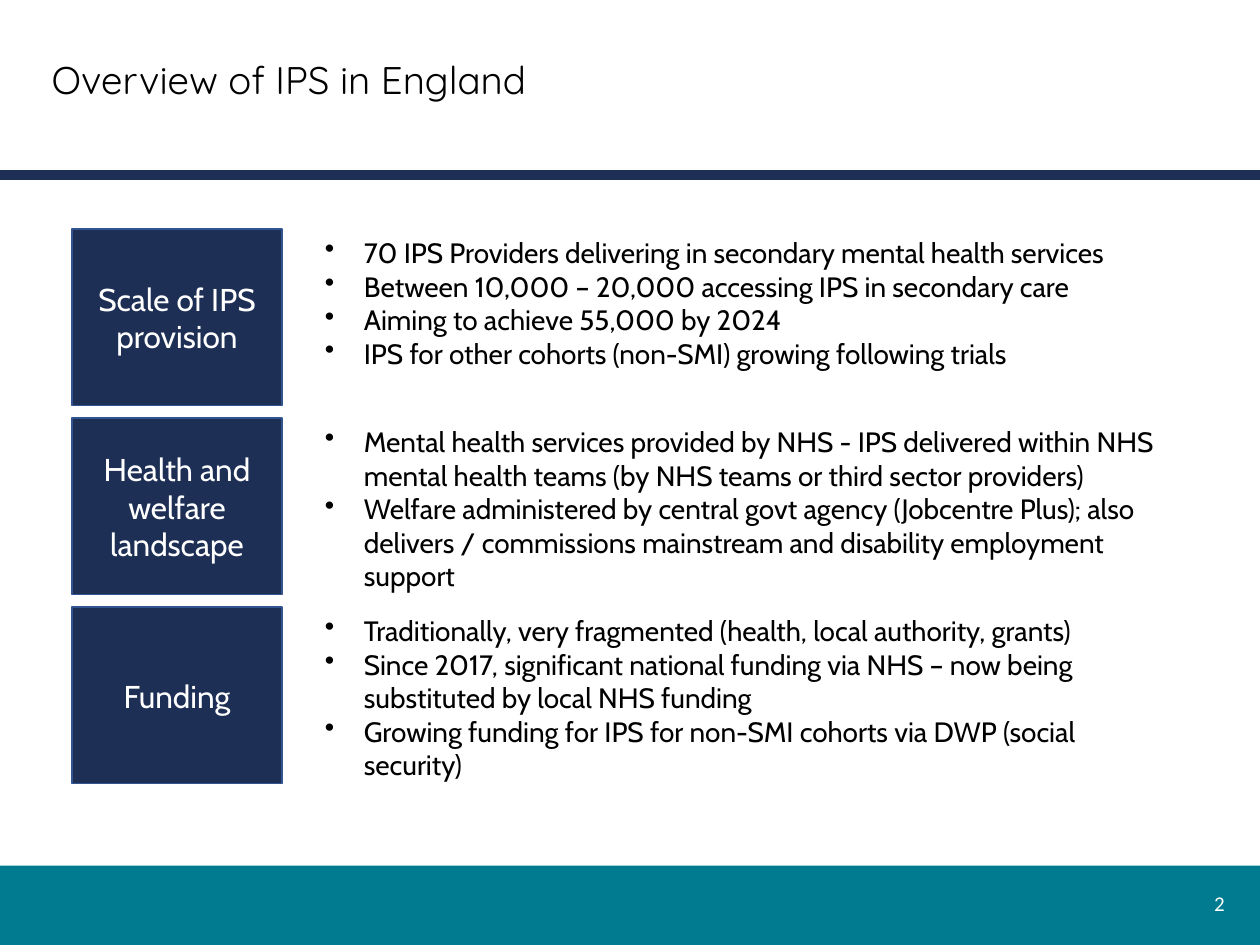
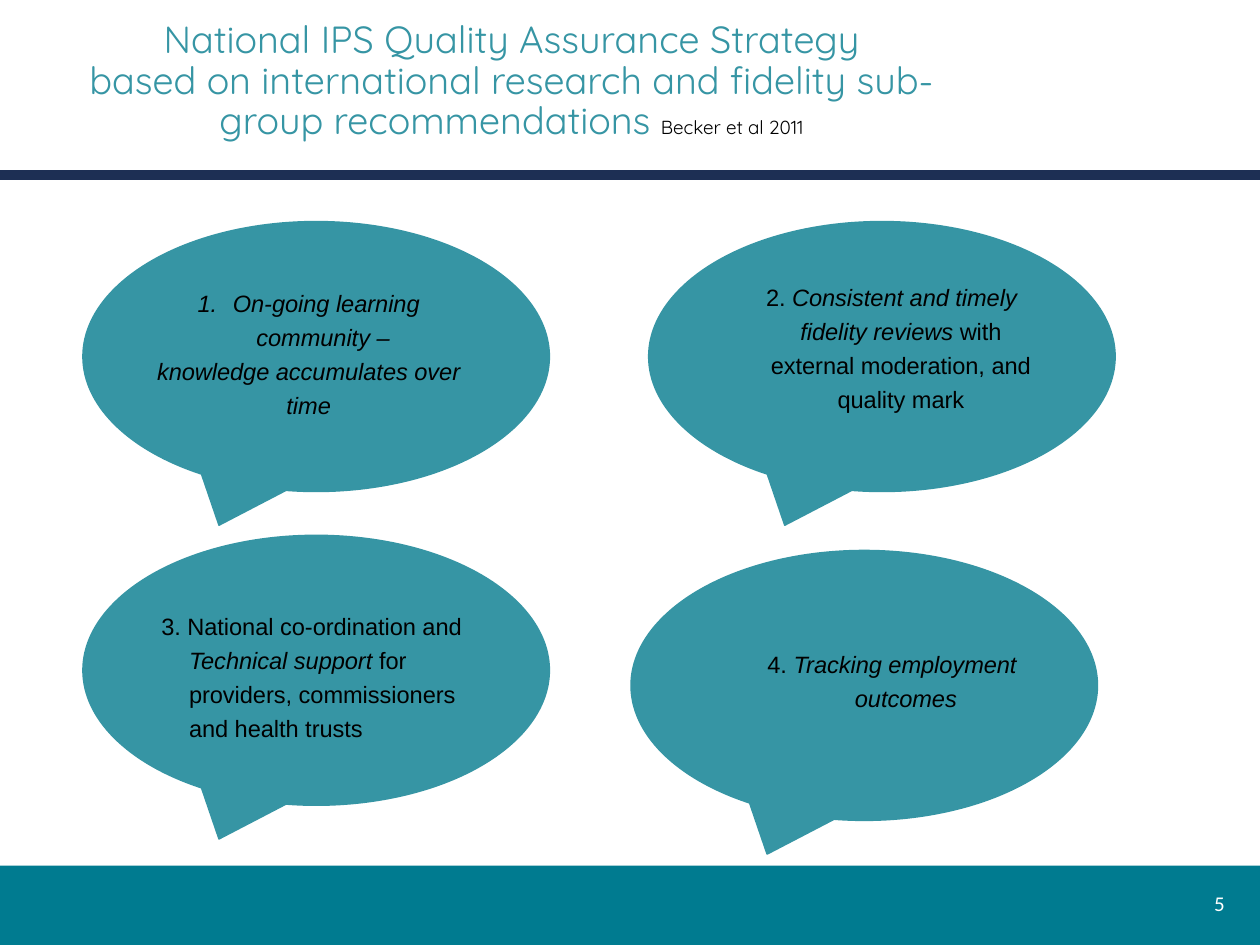
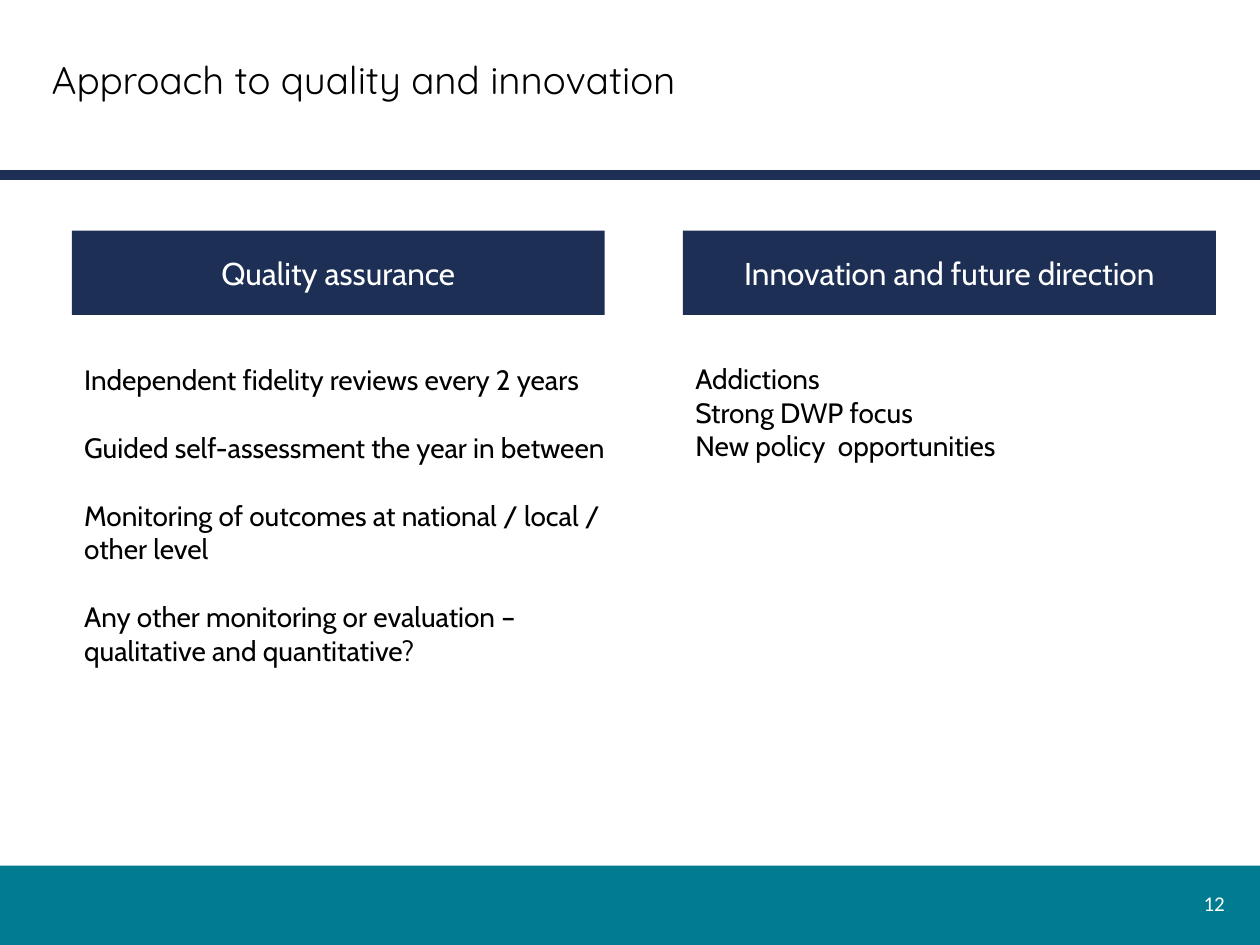
"""Build three slides on IPS provision, quality assurance and innovation in England."""
import pptx
import pptx.dml.color
import pptx.enum.shapes
import pptx.enum.text
import pptx.oxml.ns
import pptx.util
from lxml import etree

Inches = pptx.util.Inches
Pt = pptx.util.Pt
Shape = pptx.enum.shapes.MSO_SHAPE
Align = pptx.enum.text.PP_ALIGN
Anchor = pptx.enum.text.MSO_ANCHOR

NAVY = "1D2F54"
NAVY_EDGE = "325491"
TEAL = "3695A4"
BAND = "007B90"
WHITE = "FFFFFF"
BLACK = "000000"


def rgb(code):
    """Turn a hex string into a colour."""
    return pptx.dml.color.RGBColor.from_string(code)


def write(shape, paragraphs, size, font, colour, align=Align.LEFT, anchor=Anchor.TOP,
          spacing=None, gap=0, indents=None, bullets=None):
    """Fill a shape with paragraphs, each a string or a list of (text, italic) runs."""
    frame = shape.text_frame
    frame.word_wrap = True
    frame.auto_size = pptx.enum.text.MSO_AUTO_SIZE.NONE
    frame.vertical_anchor = anchor
    for index, content in enumerate(paragraphs):
        paragraph = frame.add_paragraph() if index else frame.paragraphs[0]
        if isinstance(content, str):
            paragraph.text = content
        else:
            for text, italic in content:
                run = paragraph.add_run()
                run.text = text
                run.font.italic = italic
        properties = paragraph._p.get_or_add_pPr()
        if indents:
            margin, first_line = indents[index]
            properties.set("marL", str(Inches(margin)))
            properties.set("indent", str(Inches(first_line)))
        if bullets and bullets[index]:
            tag, key, value = bullets[index]
            etree.SubElement(properties, pptx.oxml.ns.qn(tag)).set(key, value)
        paragraph.alignment = align
        if spacing:
            paragraph.line_spacing = spacing
        if index and gap:
            paragraph.space_before = Pt(gap)
        for run in paragraph.runs:
            run.font.size = Pt(size)
            run.font.name = font
            run.font.color.rgb = rgb(colour)


deck = pptx.Presentation()
deck.slide_width = Inches(10)
deck.slide_height = Inches(7.5)

strategy_title = [("National IPS Quality Assurance Strategy", None),
                  ("based on international research and fidelity sub-group recommendations ", None),
                  ("Becker et al 2011", None)]
headings = [
    ("Overview of IPS in England", "2", 9.4, 22, BLACK, Align.LEFT),
    (strategy_title, "5", 7.5, 21.6, TEAL, Align.CENTER),
    ("Approach to quality and innovation", "12", 9.4, 22, BLACK, Align.LEFT),
]
slides = []
for heading, number, width, size, colour, align in headings:
    slide = deck.slides.add_slide(deck.slide_layouts[5])
    slides.append(slide)

    band = slide.shapes.add_shape(Shape.RECTANGLE, 0, Inches(6.87), Inches(10), Inches(0.63))
    band.shadow.inherit = False
    band.fill.solid()
    band.fill.fore_color.rgb = rgb(BAND)
    band.line.fill.background()

    rule = slide.shapes.add_connector(pptx.enum.shapes.MSO_CONNECTOR.STRAIGHT,
                                      0, Inches(1.39), Inches(10), Inches(1.39))
    rule.line.color.rgb = rgb(NAVY)
    rule.line.width = Pt(6)
    etree.SubElement(rule._element.spPr, pptx.oxml.ns.qn("a:effectLst"))

    title = slide.shapes.title
    title.left, title.top = Inches(0.31), Inches(0.23)
    title.width, title.height = Inches(width), Inches(0.84)
    write(title, [heading], size, "Quicksand", colour, align, Anchor.MIDDLE, spacing=0.9)

    page = slide.shapes.add_textbox(Inches(9.39), Inches(6.97), Inches(0.43), Inches(0.4))
    write(page, [number], 12, "Calibri", WHITE, Align.RIGHT, Anchor.MIDDLE)

overview, strategy, approach = slides

topics = [
    ("Scale of IPS provision", [
        "70 IPS Providers delivering in secondary mental health services",
        "Between 10,000 – 20,000 accessing IPS in secondary care",
        "Aiming to achieve 55,000 by 2024",
        "IPS for other cohorts (non-SMI) growing following trials"]),
    ("Health and welfare landscape", [
        "Mental health services provided by NHS - IPS delivered within NHS mental health teams "
        "(by NHS teams or third sector providers)",
        "Welfare administered by central govt agency (Jobcentre Plus); also delivers / "
        "commissions mainstream and disability employment support"]),
    ("Funding", [
        "Traditionally, very fragmented (health, local authority, grants)",
        "Since 2017, significant national funding via NHS – now being substituted by local "
        "NHS funding",
        "Growing funding for IPS for non-SMI cohorts via DWP (social security)"]),
]
for row, (topic, points) in enumerate(topics):
    top = Inches(1.82 + 1.5 * row)
    label = overview.shapes.add_shape(Shape.RECTANGLE, Inches(0.57), top, Inches(1.67), Inches(1.4))
    label.shadow.inherit = False
    label.fill.solid()
    label.fill.fore_color.rgb = rgb(NAVY)
    label.line.color.rgb = rgb(NAVY_EDGE)
    label.line.width = Pt(1)
    write(label, [topic], 18, "Cabin", WHITE, Align.CENTER, Anchor.MIDDLE)
    details = overview.shapes.add_textbox(Inches(2.48), top, Inches(6.91), Inches(1.4))
    write(details, points, 16, "Cabin", BLACK, indents=[(0.31, -0.31)] * len(points),
          bullets=[("a:buChar", "char", "•")] * len(points))

strategy_heading = strategy.shapes.title.text_frame.paragraphs[0]
citation = strategy_heading.runs[2]
citation.font.size = Pt(10.8)
citation.font.color.rgb = rgb(BLACK)
strategy_heading.add_line_break()
line_break = strategy_heading._p[-1]
strategy_heading.runs[0]._r.addnext(line_break)

recommendations = [
    ((0.66, 1.76), (0.93, 2.21, 2.89, 1.6), Align.CENTER,
     [[("On-going learning community – ", True)], [("knowledge accumulates over time", True)]],
     [(0.43, -0.28), (0.15, 0)], [("a:buAutoNum", "type", "arabicPeriod"), None]),
    ((5.15, 1.76), (5.64, 2.16, 2.72, 1.6), Align.CENTER,
     [[("2. ", False), ("Consistent and timely fidelity reviews ", True),
       ("with external moderation, and quality mark", False)]],
     [(0.3, -0.15)], None),
    ((0.66, 4.25), (1.06, 4.77, 2.89, 1.6), Align.LEFT,
     [[("3. National co-ordination and ", False), ("Technical support ", True),
       ("for providers, commissioners and health trusts", False)]],
     [(0.37, -0.22)], None),
    ((5.01, 4.37), (5.55, 5.07, 2.91, 1.2), Align.CENTER,
     [[("4. ", False), ("Tracking employment outcomes", True)]],
     [(0.37, -0.22)], None),
]
for (left, top), wording_box, align, wording, indents, bullets in recommendations:
    callout = strategy.shapes.add_shape(Shape.OVAL_CALLOUT, Inches(left), Inches(top),
                                        Inches(3.7), Inches(2.14))
    callout.shadow.inherit = False
    callout.fill.solid()
    callout.fill.fore_color.rgb = rgb(TEAL)
    callout.line.color.rgb = rgb(TEAL)
    callout.line.width = Pt(1)
    recommendation = strategy.shapes.add_textbox(*[Inches(length) for length in wording_box])
    frame = recommendation.text_frame
    frame.margin_left = frame.margin_right = Inches(0.07)
    frame.margin_top = frame.margin_bottom = Inches(0.04)
    write(recommendation, wording, 13.5, "Arial", BLACK, align, spacing=1.2,
          indents=indents, bullets=bullets)

themes = [
    ("Quality assurance", 0.57, 2.83, 19.5, [
        "Independent fidelity reviews every 2 years",
        "Guided self-assessment the year in between",
        "Monitoring of outcomes at national / local / other level",
        "Any other monitoring or evaluation – qualitative and quantitative?"]),
    ("Innovation and future direction", 5.42, 2.82, 0, [
        "Addictions",
        "Strong DWP focus",
        "New policy  opportunities"]),
]
for theme, left, top, gap, items in themes:
    header = approach.shapes.add_shape(Shape.RECTANGLE, Inches(left), Inches(1.83),
                                       Inches(4.23), Inches(0.67))
    header.shadow.inherit = False
    header.fill.solid()
    header.fill.fore_color.rgb = rgb(NAVY)
    header.line.fill.background()
    write(header, [theme], 18, "Cabin", WHITE, Align.CENTER, Anchor.MIDDLE)
    column = approach.shapes.add_textbox(Inches(left), Inches(top), Inches(4.34), Inches(3.46))
    write(column, items, 16, "Cabin", BLACK, gap=gap)

deck.save("out.pptx")
